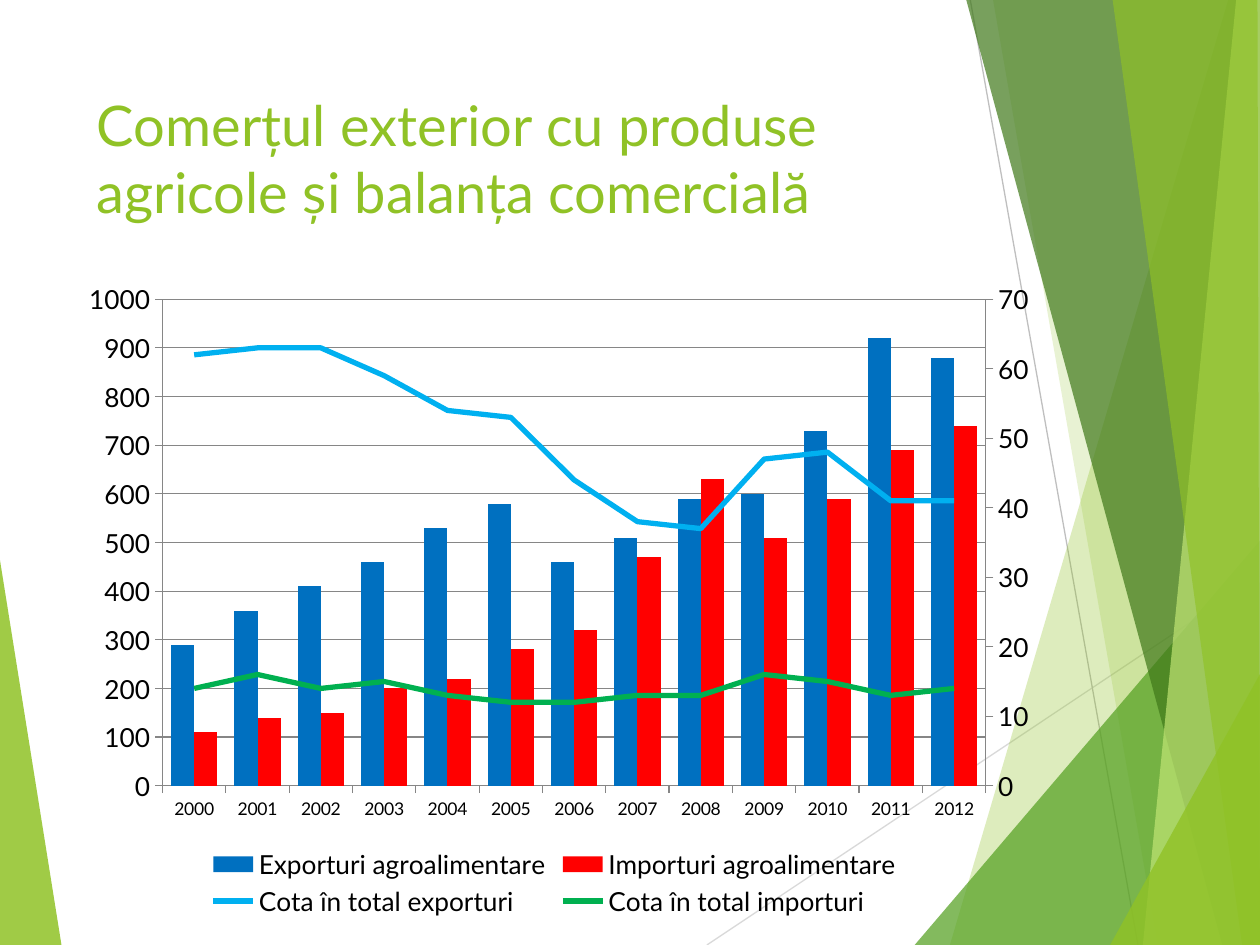
import dataclasses

import lxml.etree
import pptx
import pptx.chart.data
import pptx.dml.color
import pptx.enum.chart
import pptx.enum.shapes
import pptx.enum.text
import pptx.oxml
import pptx.oxml.ns
import pptx.util

Cm, Pt = pptx.util.Cm, pptx.util.Pt
qn = pptx.oxml.ns.qn


@dataclasses.dataclass
class Theme:
    font: str = "Lato"
    title: float = 32
    label: float = 15
    small: float = 10
    text: str = "000000"
    lime: str = "90C226"
    green: str = "54A021"
    dark: str = "3F7819"
    pale: str = "C0E474"
    axis: str = "868686"
    hairlines: tuple = ("D9D9D9", "BFBFBF")
    series: tuple = ("0070C0", "FF0000", "00B0F0", "00B050")


theme = Theme()


def rgb(value):
    return pptx.dml.color.RGBColor.from_string(value)


def set_font(font, size, color):
    font.name = theme.font
    font.size = Pt(size)
    font.color.rgb = rgb(color)


prs = pptx.Presentation()
prs.slide_width, prs.slide_height = Cm(25.4), Cm(19.05)
s = prs.slides.add_slide(prs.slide_layouts[5])

# Background wedges, in hundredths of a centimetre: points, colour, opacity %
R, B = 2540, 1905
wedges = [
    ([(0, 1129), (124, B), (0, B)], theme.lime, 85),
    ([(2476, 0), (1915, B), (R, B), (R, 0)], theme.lime, 30),
    ([(2002, 0), (2334, B), (R, B), (R, 0)], theme.lime, 20),
    ([(1844, B), (R, 1090), (R, B)], theme.green, 72),
    ([(1948, 0), (2464, B), (R, B), (R, 0)], theme.dark, 70),
    ([(2492, 0), (2304, B), (R, B), (R, 0)], theme.pale, 70),
    ([(2243, 0), (2504, B), (R, B), (2535, 0)], theme.lime, 65),
    ([(2238, B), (R, 1359), (R, B)], theme.lime, 80),
]
hairlines = [(1425, B, R, 1161), (1956, 0, 2294, B)]

for i, (points, color, opacity) in enumerate(wedges):
    builder = s.shapes.build_freeform(*points[0], scale=Cm(0.01))
    builder.add_line_segments(points[1:], close=True)
    sp = builder.convert_to_shape()
    sp.shadow.inherit = False
    sp.line.fill.background()
    sp.fill.solid()
    sp.fill.fore_color.rgb = rgb(color)
    clr = sp._element.spPr.find(".//" + qn("a:srgbClr"))
    lxml.etree.SubElement(clr, qn("a:alpha")).set("val", str(opacity * 1000))
    if i == 0:
        # Thin lines lie between the left wedge and the right ones
        for ends, line_color in zip(hairlines, theme.hairlines):
            line = s.shapes.add_connector(
                pptx.enum.shapes.MSO_CONNECTOR.STRAIGHT,
                *[Cm(v / 100) for v in ends])
            line.line.color.rgb = rgb(line_color)
            line.line.width = Pt(0.75)
            lxml.etree.SubElement(line._element.spPr, qn("a:effectLst"))

# Title, in front of the wedges
title = s.shapes.title
s.shapes._spTree.append(title._element)
title.left, title.top, title.width, title.height = Cm(1.7), Cm(1.7), Cm(17.63), Cm(3.66)
tf = title.text_frame
tf.word_wrap = True
tf.auto_size = pptx.enum.text.MSO_AUTO_SIZE.NONE
tf.vertical_anchor = pptx.enum.text.MSO_ANCHOR.TOP
p = tf.paragraphs[0]
p.alignment = pptx.enum.text.PP_ALIGN.LEFT
r = p.add_run()
r.text = "Comerțul exterior cu produse agricole și balanța comercială"
set_font(r.font, theme.title, theme.lime)

# Chart data
data = pptx.chart.data.CategoryChartData()
data.categories = [str(year) for year in range(2000, 2013)]
for name, values in [
    ("Exporturi agroalimentare",
     [290, 360, 410, 460, 530, 580, 460, 510, 590, 600, 730, 920, 880]),
    ("Importuri agroalimentare",
     [110, 140, 150, 200, 220, 280, 320, 470, 630, 510, 590, 690, 740]),
    ("Cota în total exporturi",
     [62, 63, 63, 59, 54, 53, 44, 38, 37, 47, 48, 41, 41]),
    ("Cota în total importuri",
     [14, 16, 14, 15, 13, 12, 12, 13, 13, 16, 15, 13, 14]),
]:
    data.add_series(name, values)
chart = s.shapes.add_chart(
    pptx.enum.chart.XL_CHART_TYPE.COLUMN_CLUSTERED,
    Cm(1.3), Cm(5.51), Cm(19.76), Cm(13.08), data).chart
chart.has_title = False
set_font(chart.font, theme.small, theme.text)

# Left and bottom axes
cat, val = chart.category_axis, chart.value_axis
val.minimum_scale, val.maximum_scale, val.major_unit = 0, 1000, 100
val.tick_labels.number_format = "0"
val.tick_labels.number_format_is_linked = False
val.has_major_gridlines = True
set_font(val.tick_labels.font, theme.label, theme.text)
set_font(cat.tick_labels.font, theme.small, theme.text)
for fmt in (cat.format, val.format, val.major_gridlines.format):
    fmt.line.color.rgb = rgb(theme.axis)
    fmt.line.width = Pt(0.75)
for axis in (cat, val):
    axis.major_tick_mark = pptx.enum.chart.XL_TICK_MARK.OUTSIDE

# The two shares become lines on a right-hand axis
ns = 'xmlns:c="http://schemas.openxmlformats.org/drawingml/2006/chart"'
bars = chart.plots[0]._element
lines = pptx.oxml.parse_xml(
    f'<c:lineChart {ns}><c:grouping val="standard"/><c:varyColors val="0"/>'
    '<c:marker val="1"/><c:axId val="501"/><c:axId val="502"/></c:lineChart>')
line_marker = lines.find(qn("c:marker"))
for ser in bars.findall(qn("c:ser"))[2:]:
    for invert in ser.findall(qn("c:invertIfNegative")):
        ser.remove(invert)
    line_marker.addprevious(ser)
bars.addnext(lines)

hidden_cat = pptx.oxml.parse_xml(
    f'<c:catAx {ns}><c:axId val="501"/><c:scaling><c:orientation val="minMax"/></c:scaling>'
    '<c:delete val="1"/><c:axPos val="b"/><c:crossAx val="502"/></c:catAx>')
right_val = pptx.oxml.parse_xml(
    f'<c:valAx {ns}><c:axId val="502"/><c:scaling><c:orientation val="minMax"/>'
    '<c:max val="70"/><c:min val="0"/></c:scaling><c:delete val="0"/><c:axPos val="r"/>'
    '<c:numFmt formatCode="0" sourceLinked="0"/><c:majorTickMark val="out"/>'
    '<c:minorTickMark val="none"/><c:tickLblPos val="nextTo"/>'
    '<c:crossAx val="501"/><c:crosses val="max"/><c:majorUnit val="10"/></c:valAx>')
val._element.addnext(hidden_cat)
hidden_cat.addnext(right_val)
right = type(val)(right_val)
set_font(right.tick_labels.font, theme.label, theme.text)
right.format.line.color.rgb = rgb(theme.axis)
right.format.line.width = Pt(0.75)

# Series colours
columns, shares = chart.plots
columns.gap_width, columns.overlap = 75, 0
columns.vary_by_categories = False
for ser, color in zip(columns.series, theme.series[:2]):
    ser.format.fill.solid()
    ser.format.fill.fore_color.rgb = rgb(color)
for ser, color in zip(shares.series, theme.series[2:]):
    ser.smooth = False
    ser.marker.style = pptx.enum.chart.XL_MARKER_STYLE.NONE
    ser.format.line.color.rgb = rgb(color)
    ser.format.line.width = Pt(3)

# Plot area and legend
area = bars.getparent()
for old in area.findall(qn("c:layout")):
    area.remove(old)
sizes = "".join(f'<c:{k} val="{v}"/>' for k, v in
                {"x": 0.1, "y": 0.04, "w": 0.84, "h": 0.75}.items())
area.insert(0, pptx.oxml.parse_xml(
    f'<c:layout {ns}><c:manualLayout><c:layoutTarget val="inner"/>'
    f'<c:xMode val="edge"/><c:yMode val="edge"/>{sizes}</c:manualLayout></c:layout>'))
chart.has_legend = True
chart.legend.position = pptx.enum.chart.XL_LEGEND_POSITION.BOTTOM
chart.legend.include_in_layout = False
set_font(chart.legend.font, theme.label, theme.text)

prs.save("out.pptx")
